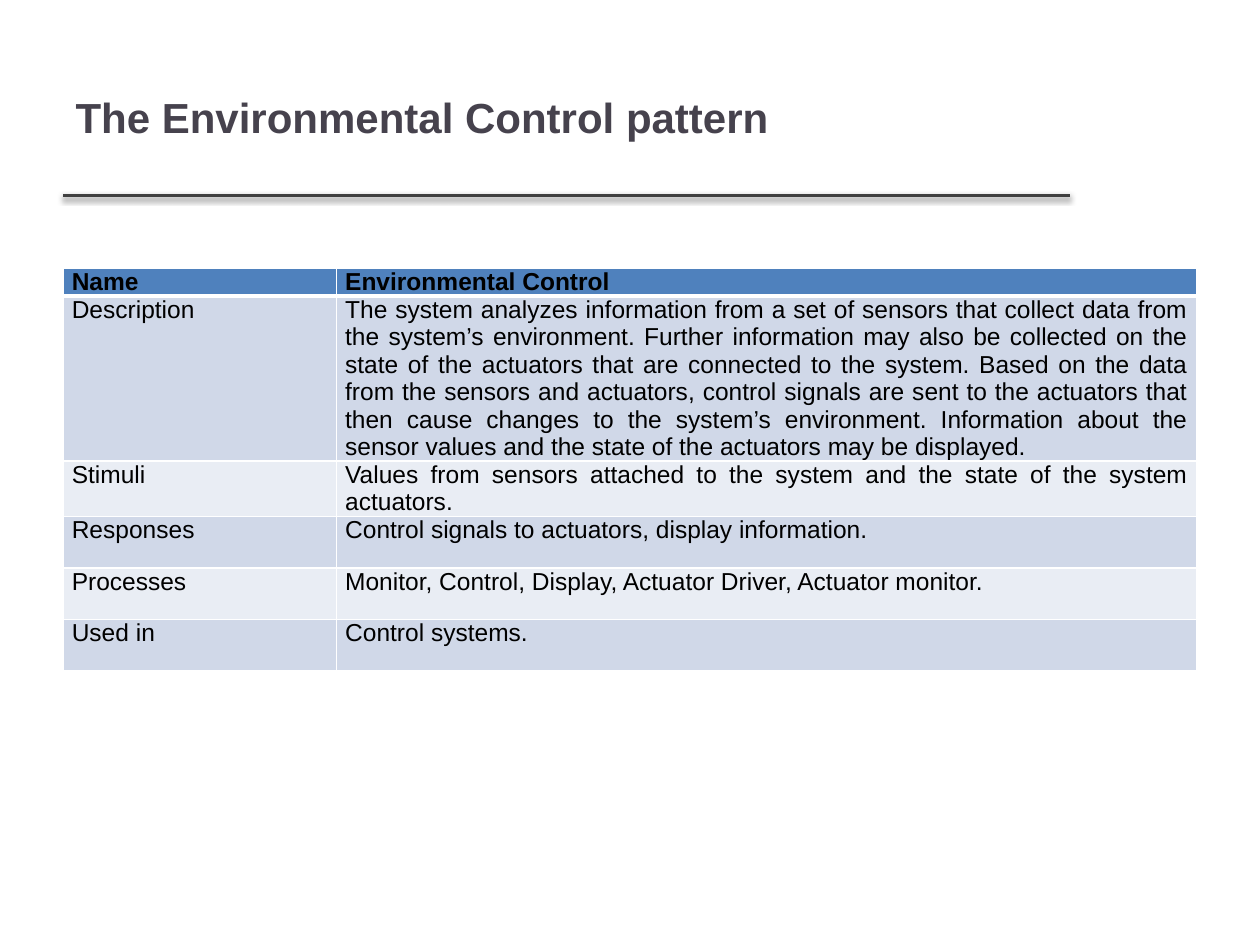
from lxml.etree import SubElement
from pptx import Presentation
from pptx.dml.color import RGBColor
from pptx.enum.shapes import MSO_CONNECTOR
from pptx.enum.text import MSO_ANCHOR, PP_ALIGN
from pptx.oxml import parse_xml
from pptx.oxml.ns import nsdecls, qn
from pptx.util import Inches, Pt

ROWS = [
    ("Name", "Environmental Control"),
    ("Description",
     "The system analyzes information from a set of sensors that collect data "
     "from the system’s environment. Further information may also be collected "
     "on the state of the actuators that are connected to the system. Based on "
     "the data from the sensors and actuators, control signals are sent to the "
     "actuators that then cause changes to the system’s environment. Information "
     "about the sensor values and the state of the actuators may be displayed."),
    ("Stimuli",
     "Values from sensors attached to the system and the state of the system "
     "actuators."),
    ("Responses", "Control signals to actuators, display information."),
    ("Processes", "Monitor, Control, Display, Actuator Driver, Actuator monitor."),
    ("Used in", "Control systems."),
]
HEADER, BANDS = "4F81BD", ("E9EDF4", "D0D8E8")


def rgb(color):
    return RGBColor.from_string(color)


def format_text(p, size, color, bold):
    for r in p.runs:
        r.font.name = "Arial"
        r.font.size = Pt(size)
        r.font.bold = bold
        r.font.color.rgb = rgb(color)


def add_title(s, text):
    title = s.shapes.title
    title.left, title.top = Inches(0.5), Inches(0.3)
    title.width, title.height = Inches(7.98), Inches(1.25)
    tf = title.text_frame
    tf.text = text
    tf.vertical_anchor = MSO_ANCHOR.MIDDLE
    p = tf.paragraphs[0]
    p.alignment = PP_ALIGN.LEFT
    format_text(p, 24, "46424D", True)


def add_rule(s):
    y = Inches(1.55)
    rule = s.shapes.add_connector(
        MSO_CONNECTOR.STRAIGHT, Inches(0.5), y, Inches(8.49), y)
    rule.line.color.rgb = rgb("404040")
    rule.line.width = Pt(2)
    effects = SubElement(rule._element.spPr, qn("a:effectLst"))
    effects.append(parse_xml(
        f'<a:outerShdw {nsdecls("a")} blurRad="{Pt(3.1)}" dist="{Pt(1.6)}" '
        'dir="5400000" rotWithShape="0"><a:srgbClr val="000000">'
        '<a:alpha val="38000"/></a:srgbClr></a:outerShdw>'))


def set_borders(cell, top, bottom):
    tcPr = cell._tc.get_or_add_tcPr()
    widths = {"lnL": 1, "lnR": 1, "lnT": top, "lnB": bottom}
    for i, (side, width) in enumerate(widths.items()):
        tcPr.insert(i, parse_xml(
            f'<a:{side} {nsdecls("a")} w="{Pt(width)}"><a:solidFill>'
            f'<a:srgbClr val="FFFFFF"/></a:solidFill></a:{side}>'))


def fill_cell(cell, text, row):
    cell.margin_left = cell.margin_right = Inches(0.07)
    cell.margin_top = cell.margin_bottom = 0
    cell.fill.solid()
    cell.fill.fore_color.rgb = rgb(BANDS[row % 2] if row else HEADER)
    set_borders(cell, 3 if row == 1 else 1, 3 if row == 0 else 1)
    cell.text = text
    p = cell.text_frame.paragraphs[0]
    p.alignment = PP_ALIGN.JUSTIFY
    p.space_after = Pt(3)
    format_text(p, 14, "000000", row == 0)


def add_pattern_table(s):
    table = s.shapes.add_table(
        len(ROWS), 2, Inches(0.5), Inches(2.13), Inches(9), Inches(2.26)).table
    for column, width in zip(table.columns, (2.17, 6.83)):
        column.width = Inches(width)
    for i, texts in enumerate(ROWS):
        table.rows[i].height = Inches(0.41 if i else 0.21)
        for j, text in enumerate(texts):
            fill_cell(table.cell(i, j), text, i)


def main():
    prs = Presentation()
    prs.slide_width, prs.slide_height = Inches(10), Inches(7.5)
    s = prs.slides.add_slide(prs.slide_layouts[5])
    add_rule(s)
    add_title(s, "The Environmental Control pattern")
    add_pattern_table(s)
    prs.save("out.pptx")


if __name__ == "__main__":
    main()
